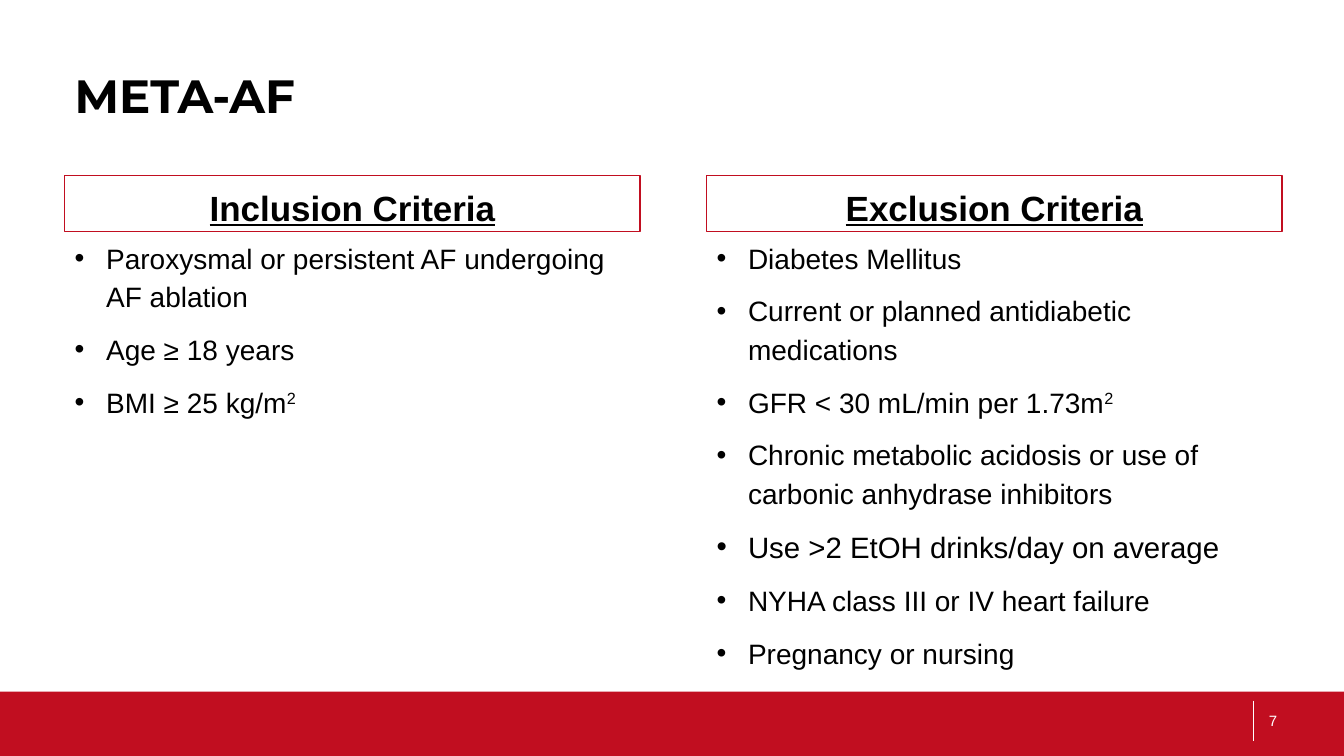
from dataclasses import dataclass

from lxml.etree import SubElement
from pptx import Presentation
from pptx.dml.color import RGBColor
from pptx.enum.shapes import MSO_CONNECTOR, MSO_SHAPE
from pptx.enum.text import MSO_ANCHOR, PP_ALIGN
from pptx.oxml.ns import qn
from pptx.util import Pt


@dataclass(frozen=True)
class Theme:
    """Colours, fonts and type sizes of the slide."""
    red: RGBColor = RGBColor(0xC1, 0x0E, 0x20)
    white: RGBColor = RGBColor(0xFF, 0xFF, 0xFF)
    black: RGBColor = RGBColor(0, 0, 0)
    title_font: str = "Montserrat"
    body_font: str = "Arial"
    title_size: float = 33.3
    heading_size: float = 25
    body_size: float = 20
    large_body_size: float = 21
    number_size: float = 10.7


THEME = Theme()
COLUMN_WIDTH = 411
COLUMNS = [
    (46.2, "Inclusion Criteria", [
        ("Paroxysmal or persistent AF undergoing AF ablation", "", THEME.body_size),
        ("Age ≥ 18 years", "", THEME.body_size),
        ("BMI ≥ 25 kg/m", "2", THEME.body_size),
    ]),
    (504.7, "Exclusion Criteria", [
        ("Diabetes Mellitus", "", THEME.body_size),
        ("Current or planned antidiabetic medications", "", THEME.body_size),
        ("GFR < 30 mL/min per 1.73m", "2", THEME.body_size),
        ("Chronic metabolic acidosis or use of carbonic anhydrase inhibitors", "",
         THEME.body_size),
        ("Use >2 EtOH drinks/day on average", "", THEME.large_body_size),
        ("NYHA class III or IV heart failure", "", THEME.body_size),
        ("Pregnancy or nursing", "", THEME.body_size),
    ]),
]


def apply_format(target, values):
    """Set each attribute in values on the target."""
    for name, value in values.items():
        setattr(target, name, value)


def add_run(paragraph, text, size, color=THEME.black, font=THEME.body_font, **values):
    """Add a formatted run to a paragraph and return it."""
    run = paragraph.add_run()
    run.text = text
    apply_format(run.font, {"name": font, "size": Pt(size), **values})
    run.font.color.rgb = color
    return run


def add_text_box(slide, left, top, width, height, anchor=MSO_ANCHOR.TOP):
    """Add a wrapping text box and return its text frame."""
    box = slide.shapes.add_textbox(Pt(left), Pt(top), Pt(width), Pt(height))
    apply_format(box.text_frame, {"word_wrap": True, "vertical_anchor": anchor})
    return box.text_frame


def add_rectangle(slide, left, top, width, height, fill, line=None):
    """Add a flat rectangle, outlined only when a line colour is given."""
    shape = slide.shapes.add_shape(
        MSO_SHAPE.RECTANGLE, Pt(left), Pt(top), Pt(width), Pt(height))
    shape.shadow.inherit = False
    shape.fill.solid()
    shape.fill.fore_color.rgb = fill
    if line is None:
        shape.line.fill.background()
    else:
        shape.line.color.rgb = line
        shape.line.width = Pt(1)
    return shape


def add_heading(slide, left, text):
    """Add an outlined column heading."""
    shape = add_rectangle(slide, left, 125.3, COLUMN_WIDTH, 40.3, THEME.white, THEME.red)
    apply_format(shape.text_frame, {"word_wrap": True, "vertical_anchor": MSO_ANCHOR.TOP})
    paragraph = shape.text_frame.paragraphs[0]
    apply_format(paragraph, {"alignment": PP_ALIGN.CENTER, "line_spacing": 1.15,
                             "space_before": Pt(10)})
    add_run(paragraph, text, THEME.heading_size, bold=True, underline=True)


def add_bullets(slide, left, items):
    """Add a bulleted list of text, superscript and size entries."""
    frame = add_text_box(slide, left, 165, COLUMN_WIDTH, 312)
    for index, (text, superscript, size) in enumerate(items):
        paragraph = frame.add_paragraph() if index else frame.paragraphs[0]
        apply_format(paragraph, {"line_spacing": 1.15, "space_before": Pt(10)})
        properties = paragraph._p.get_or_add_pPr()
        properties.set("marL", str(Pt(22.5)))
        properties.set("indent", str(-Pt(22.5)))
        SubElement(properties, qn("a:buFont")).set("typeface", THEME.body_font)
        SubElement(properties, qn("a:buChar")).set("char", "•")
        add_run(paragraph, text, size)
        if superscript:
            run = add_run(paragraph, superscript, size)
            run._r.get_or_add_rPr().set("baseline", "30000")


def add_title(slide, text):
    """Add the slide title."""
    frame = add_text_box(slide, 46.2, 43.2, 868, 44)
    frame.margin_top = Pt(4.8)
    add_run(frame.paragraphs[0], text, THEME.title_size,
            font=THEME.title_font, bold=True)


def add_footer(slide, number):
    """Add the footer band, its divider and the page number."""
    add_rectangle(slide, 0, 494, 960, 46, THEME.red)
    divider = slide.shapes.add_connector(
        MSO_CONNECTOR.STRAIGHT, Pt(895), Pt(500.5), Pt(895), Pt(529))
    divider.line.color.rgb = THEME.white
    divider.line.width = Pt(0.5)
    SubElement(divider._element.spPr, qn("a:effectLst"))
    frame = add_text_box(slide, 899.3, 500.5, 60.5, 28.8, MSO_ANCHOR.MIDDLE)
    add_run(frame.paragraphs[0], number, THEME.number_size, THEME.white)


def main():
    """Build and save the slide."""
    presentation = Presentation()
    apply_format(presentation, {"slide_width": Pt(960), "slide_height": Pt(540)})
    slide = presentation.slides.add_slide(presentation.slide_layouts[6])
    add_footer(slide, "7")
    add_title(slide, "META-AF")
    for left, heading, items in COLUMNS:
        add_heading(slide, left, heading)
        add_bullets(slide, left, items)
    presentation.save("out.pptx")


if __name__ == "__main__":
    main()
